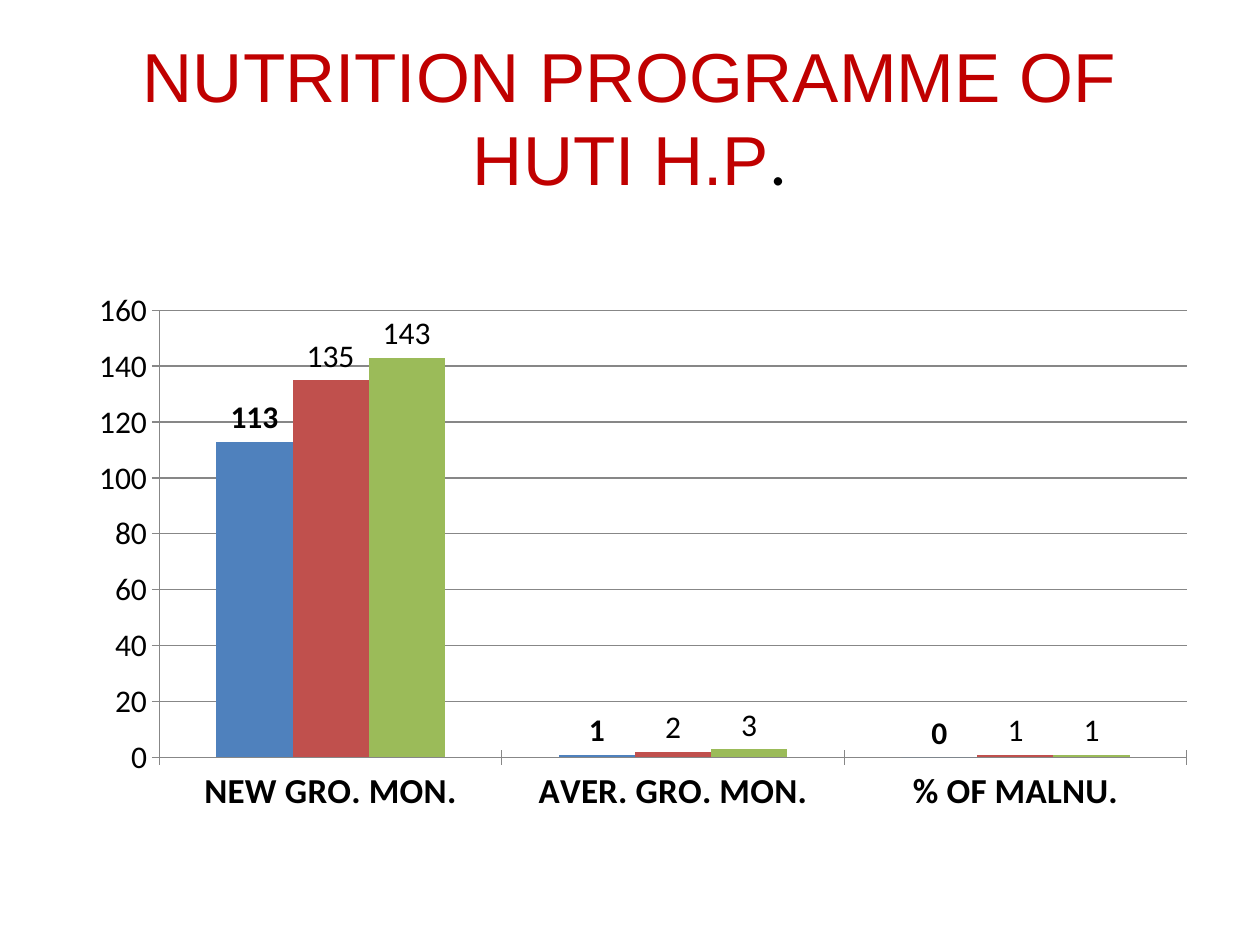
import pptx
import pptx.chart.data
import pptx.dml.color
import pptx.enum.chart
import pptx.enum.text
import pptx.util
from lxml import etree

Pt = pptx.util.Pt
RGBColor = pptx.dml.color.RGBColor
Tick = pptx.enum.chart.XL_TICK_MARK

RED = RGBColor(0xC0, 0x00, 0x00)
BLACK = RGBColor(0x00, 0x00, 0x00)
GREY = RGBColor(0x87, 0x87, 0x87)
BLUE = RGBColor(0x4F, 0x81, 0xBD)
BRICK = RGBColor(0xC0, 0x50, 0x4D)
GREEN = RGBColor(0x9B, 0xBB, 0x59)

CATEGORIES = ["NEW GRO. MON.", "AVER. GRO. MON.", "% OF MALNU."]
SERIES = [  # name, values, colour, bold labels
    ("Series 1", (113, 1, 0), BLUE, True),
    ("Series 2", (135, 2, 1), BRICK, False),
    ("Series 3", (143, 3, 1), GREEN, False),
]


class SlideBuilder:
    title_size = 39.6
    chart_font = "Calibri"
    chart_size = 18
    category_size = 20

    def __init__(self, prs):
        self.s = prs.slides.add_slide(prs.slide_layouts[5])

    def title(self, runs, left, top, width, height):
        sp = self.s.shapes.title
        sp.left, sp.top, sp.width, sp.height = map(Pt, (left, top, width, height))
        tf = sp.text_frame
        tf.word_wrap = True
        tf.vertical_anchor = pptx.enum.text.MSO_ANCHOR.MIDDLE
        p = tf.paragraphs[0]
        p.alignment = pptx.enum.text.PP_ALIGN.CENTER
        for text, font, color in runs:
            r = p.add_run()
            r.text = text
            r.font.name = font
            r.font.size = Pt(self.title_size)
            r.font.color.rgb = color

    def column_chart(self, categories, series, left, top, width, height, plot_area):
        data = pptx.chart.data.CategoryChartData()
        data.categories = categories
        for name, values, _, _ in series:
            data.add_series(name, values)
        chart = self.s.shapes.add_chart(
            pptx.enum.chart.XL_CHART_TYPE.COLUMN_CLUSTERED,
            Pt(left), Pt(top), Pt(width), Pt(height), data).chart
        chart.has_title = False
        chart.has_legend = False
        self.style_font(chart.font)
        self.place_plot(chart, plot_area)

        plot = chart.plots[0]
        plot.gap_width = 150
        plot.overlap = 0
        plot.vary_by_categories = False
        for ser, (_, _, color, bold) in zip(plot.series, series):
            ser.format.fill.solid()
            ser.format.fill.fore_color.rgb = color
            labels = ser.data_labels
            labels.show_value = True
            labels.position = pptx.enum.chart.XL_LABEL_POSITION.OUTSIDE_END
            self.style_font(labels.font, bold=bold)

        for axis in (chart.category_axis, chart.value_axis):
            axis.major_tick_mark = Tick.CROSS
            axis.minor_tick_mark = Tick.NONE
            axis.format.line.color.rgb = GREY
            axis.format.line.width = Pt(0.75)
        self.style_font(chart.category_axis.tick_labels.font, self.category_size, True)
        value_axis = chart.value_axis
        value_axis.minimum_scale = 0
        value_axis.maximum_scale = 160
        value_axis.major_unit = 20
        value_axis.has_major_gridlines = True
        grid = value_axis.major_gridlines.format.line
        grid.color.rgb = GREY
        grid.width = Pt(0.75)

    def style_font(self, font, size=None, bold=False):
        font.name = self.chart_font
        font.size = Pt(size or self.chart_size)
        font.bold = bold
        font.color.rgb = BLACK

    @staticmethod
    def place_plot(chart, plot_area):
        """Fix the inner plot area, given as fractions x, y, w, h of the chart."""
        area = chart.element.chart.plotArea
        ns = "{%s}" % area.nsmap["c"]
        for old in area.findall(ns + "layout"):
            area.remove(old)
        layout = etree.Element(ns + "layout")
        area.insert(0, layout)
        manual = etree.SubElement(layout, ns + "manualLayout")
        settings = [("layoutTarget", "inner"), ("xMode", "edge"), ("yMode", "edge")]
        settings += zip("xywh", map(str, plot_area))
        for tag, value in settings:
            etree.SubElement(manual, ns + tag).set("val", value)


def main():
    prs = pptx.Presentation()
    prs.slide_width, prs.slide_height = Pt(720), Pt(540)
    slide = SlideBuilder(prs)
    slide.title([("NUTRITION PROGRAMME OF HUTI H.P", "Arial", RED),
                 (".", "Calibri", BLACK)], 36, 21.6, 648, 90)
    slide.column_chart(CATEGORIES, SERIES, 36, 126, 648, 356.4,
                       plot_area=(0.085, 0.144, 0.906, 0.717))
    prs.save("out.pptx")


if __name__ == "__main__":
    main()
